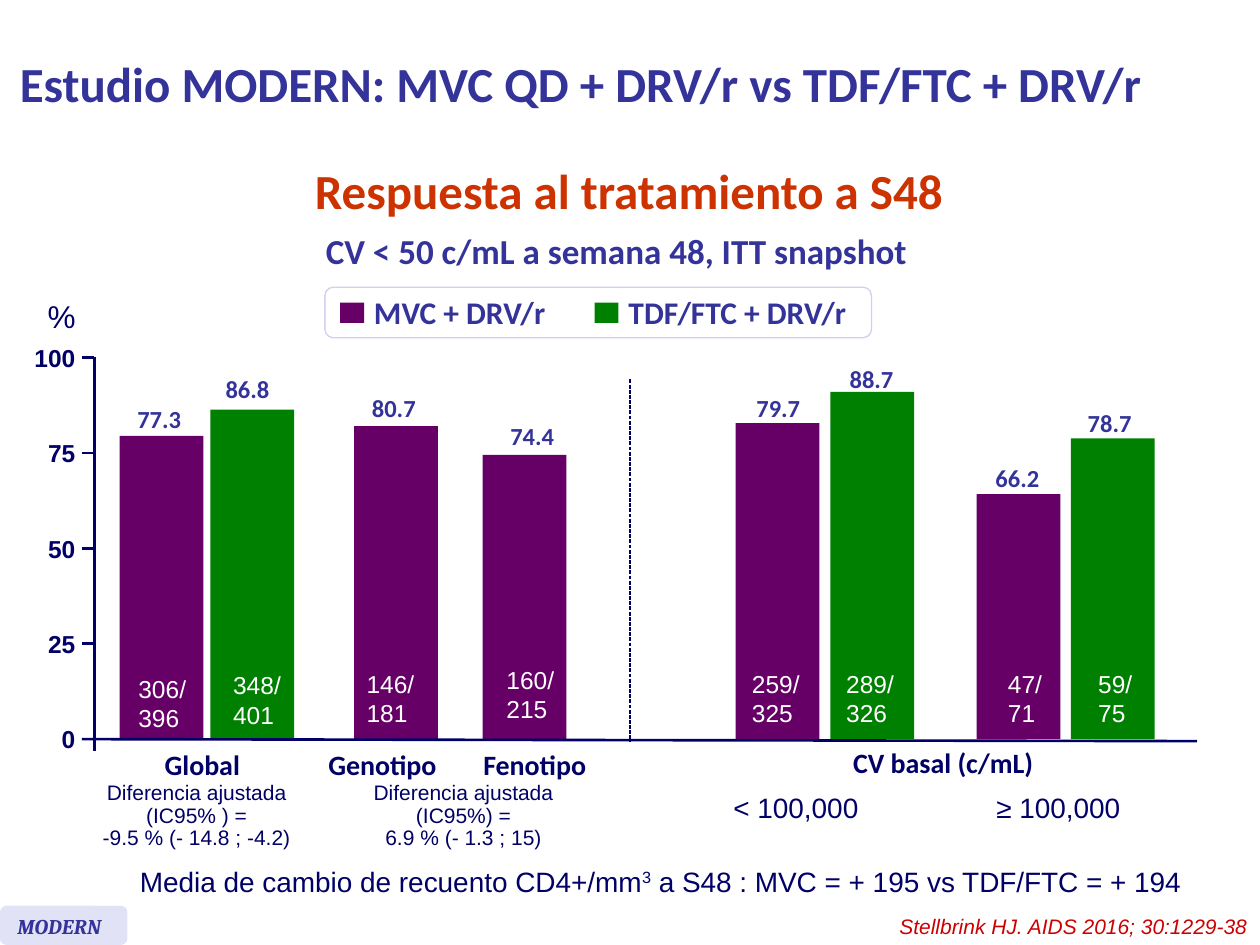
"""Build the MODERN study slide with the week 48 treatment response."""
from dataclasses import dataclass
from typing import NamedTuple, Optional

from lxml.etree import SubElement
from pptx import Presentation
from pptx.dml.color import RGBColor
from pptx.enum.dml import MSO_LINE
from pptx.enum.shapes import MSO_CONNECTOR, MSO_SHAPE as Preset
from pptx.enum.text import MSO_ANCHOR as Anchor, MSO_AUTO_SIZE as AutoSize, PP_ALIGN as Align
from pptx.oxml.ns import qn
from pptx.slide import Slide
from pptx.util import Cm, Pt


@dataclass(frozen=True)
class Theme:
    heading: str = "Calibri"
    body: str = "Arial"
    badge: str = "Cambria"
    indigo: str = "333399"
    navy: str = "000066"
    orange: str = "CC3300"
    red: str = "CC0000"
    purple: str = "660066"
    green: str = "008000"
    white: str = "FFFFFF"
    lilac: str = "D0D0F0"
    pale: str = "E2E2F6"
    title: int = 28
    subtitle: int = 20
    legend: int = 18
    label: int = 16
    value: int = 14
    small: int = 12


class Frame(NamedTuple):
    left: float
    top: float
    width: float
    height: float

    def lengths(self) -> list:
        return [Cm(side) for side in self]


class Bar(NamedTuple):
    left: float
    top: float
    color: str
    value: str
    value_left: float
    value_top: float
    count: str
    count_left: float
    count_top: float


class Label(NamedTuple):
    text: str
    frame: Frame


THEME = Theme()
BASELINE, AXIS_LEFT, CM_PER_PERCENT = 14.9, 1.9, 0.0769
BAR_WIDTH = 1.69
BARS = [
    Bar(2.41, 8.79, THEME.purple, "77.3", 2.51, 7.9, "306/\n396", 2.54, 13.46),
    Bar(4.24, 8.26, THEME.green, "86.8", 4.29, 7.29, "348/\n401", 4.45, 13.39),
    Bar(7.14, 8.59, THEME.purple, "80.7", 7.24, 7.67, "146/\n181", 7.14, 13.36),
    Bar(9.73, 9.17, THEME.purple, "74.4", 10.03, 8.23, "160/\n215", 9.96, 13.28),
    Bar(14.83, 8.53, THEME.purple, "79.7", 14.99, 7.67, "259/\n325", 14.91, 13.36),
    Bar(16.74, 7.9, THEME.green, "88.7", 16.87, 7.09, "289/\n326", 16.81, 13.36),
    Bar(19.69, 9.96, THEME.purple, "66.2", 19.81, 9.09, "47/\n71", 20.07, 13.36),
    Bar(21.59, 8.84, THEME.green, "78.7", 21.67, 7.98, "59/\n75", 21.89, 13.36),
]
GROUPS = [
    Label("Global", Frame(3.05, 14.94, 2.06, 0.94)),
    Label("Genotipo", Frame(6.35, 14.94, 2.72, 0.94)),
    Label("Fenotipo", Frame(9.47, 14.94, 2.62, 0.94)),
    Label("CV basal (c/mL)", Frame(16.92, 14.91, 4.19, 0.94)),
]
DIFFERENCES = [
    Label("Diferencia ajustada\n(IC95% ) =\n-9.5 % (- 14.8 ; -4.2)", Frame(1.73, 15.65, 4.47, 1.65)),
    Label("Diferencia ajustada\n(IC95%) =\n6.9 % (- 1.3 ; 15)", Frame(7.26, 15.65, 4.17, 1.65)),
]
VIRAL_LOADS = [
    Label("< 100,000", Frame(14.43, 15.88, 3.23, 0.86)),
    Label("≥ 100,000", Frame(19.81, 15.88, 3.05, 0.89)),
]
LEGEND = [
    (THEME.purple, 6.86, Label("MVC + DRV/r", Frame(7.29, 5.79, 4.01, 1.02))),
    (THEME.green, 11.99, Label("TDF/FTC + DRV/r", Frame(12.42, 5.79, 4.95, 1.02))),
]


def write(slide: Slide, frame: Frame, text: str, *, size: int, font: str = THEME.body,
          color: str = THEME.navy, bold: bool = False, italic: bool = False,
          align: Align = Align.LEFT, anchor: Anchor = Anchor.TOP, wrap: bool = False,
          grow: bool = True, spacing: Optional[float] = None,
          inset: Optional[float] = None, superscript: str = "") -> None:
    """Write text in a box, one paragraph per line, raising the superscript part."""
    body = slide.shapes.add_textbox(*frame.lengths()).text_frame
    body.word_wrap = wrap
    body.auto_size = AutoSize.SHAPE_TO_FIT_TEXT if grow else AutoSize.NONE
    body.vertical_anchor = anchor
    if inset is not None:
        body.margin_left = body.margin_right = Cm(inset)
        body.margin_top = body.margin_bottom = Cm(inset)
    for index, line in enumerate(text.split("\n")):
        para = body.add_paragraph() if index else body.paragraphs[0]
        para.alignment = align
        if spacing is not None:
            para.line_spacing = spacing
        for part in line.partition(superscript) if superscript else [line]:
            span = para.add_run()
            span.text = part
            span.font.name, span.font.size = font, Pt(size)
            span.font.bold, span.font.italic = bold, italic
            span.font.color.rgb = RGBColor.from_string(color)
            if superscript and part == superscript:
                span._r.get_or_add_rPr().set("baseline", "30000")


def draw_box(slide: Slide, frame: Frame, fill: str, *, preset: Preset = Preset.RECTANGLE,
             outline: Optional[str] = None) -> None:
    """Draw a filled preset shape, outlined only on request."""
    box = slide.shapes.add_shape(preset, *frame.lengths())
    box.shadow.inherit = False
    box.fill.solid()
    box.fill.fore_color.rgb = RGBColor.from_string(fill)
    if outline:
        box.line.color.rgb = RGBColor.from_string(outline)
        box.line.width = Pt(0.75)
    else:
        box.line.fill.background()


def draw_line(slide: Slide, start: tuple[float, float], end: tuple[float, float], *,
              width: float = 1.5, dash: Optional[MSO_LINE] = None) -> None:
    """Draw a straight navy line without shadow."""
    points = [Cm(place) for place in (*start, *end)]
    line = slide.shapes.add_connector(MSO_CONNECTOR.STRAIGHT, *points)
    line.line.color.rgb = RGBColor.from_string(THEME.navy)
    line.line.width = Pt(width)
    if dash is not None:
        line.line.dash_style = dash
    SubElement(line._element.spPr, qn("a:effectLst"))


def draw_bar(slide: Slide, bar: Bar) -> None:
    """Draw a bar with its value above and its patient count inside."""
    draw_box(slide, Frame(bar.left, bar.top, BAR_WIDTH, BASELINE - bar.top), bar.color)
    write(slide, Frame(bar.value_left, bar.value_top, 1.4, 1.12), bar.value, size=THEME.value,
          font=THEME.heading, color=THEME.indigo, bold=True, align=Align.CENTER, inset=0.25)
    count_width = 1.47 if len(bar.count) > 6 else 1.22
    write(slide, Frame(bar.count_left, bar.count_top, count_width, 1.45), bar.count,
          size=THEME.value, color=THEME.white)


def draw_axes(slide: Slide) -> None:
    """Draw the percentage scale, the base line and the divider."""
    for percent in range(0, 101, 25):
        level = BASELINE - percent * CM_PER_PERCENT
        width = 0.28 * len(str(percent))
        write(slide, Frame(1.52 - width, level - 0.3, width, 0.6), str(percent), size=THEME.value,
              bold=True, align=Align.RIGHT, anchor=Anchor.MIDDLE, inset=0)
        if percent:
            draw_line(slide, (1.65, level), (AXIS_LEFT, level))
    draw_line(slide, (AXIS_LEFT, 7.19), (AXIS_LEFT, 15.14))
    draw_line(slide, (1.65, BASELINE), (24.13, 14.94))
    draw_line(slide, (12.7, 7.65), (12.7, 14.94), width=0.75, dash=MSO_LINE.SQUARE_DOT)
    write(slide, Frame(0.71, 5.87, 1.07, 1.02), "%", size=THEME.legend)


def draw_legend(slide: Slide) -> None:
    """Draw the framed key of both treatments."""
    draw_box(slide, Frame(6.55, 5.79, 11.02, 1.02), THEME.white,
             preset=Preset.ROUNDED_RECTANGLE, outline=THEME.lilac)
    for color, left, label in LEGEND:
        draw_box(slide, Frame(left, 6.1, 0.48, 0.41), color)
        write(slide, label.frame, label.text, size=THEME.legend, font=THEME.heading,
              color=THEME.indigo, bold=True)


def main() -> None:
    """Assemble and save the deck."""
    deck = Presentation()
    deck.slide_width, deck.slide_height = Cm(25.4), Cm(19.05)
    page = deck.slides.add_slide(deck.slide_layouts[6])
    write(page, Frame(0.15, 0.13, 25.17, 3.07), "Estudio MODERN: MVC QD + DRV/r vs TDF/FTC + DRV/r",
          size=THEME.title, font=THEME.heading, color=THEME.indigo, bold=True,
          anchor=Anchor.MIDDLE, wrap=True, grow=False)
    write(page, Frame(5.97, 3.12, 13.41, 1.45), "Respuesta al tratamiento a S48", size=THEME.title,
          font=THEME.heading, color=THEME.orange, bold=True, align=Align.CENTER)
    write(page, Frame(4.29, 4.65, 16.28, 0.97), "CV < 50 c/mL a semana 48, ITT snapshot",
          size=THEME.subtitle, font=THEME.heading, color=THEME.indigo, bold=True,
          align=Align.CENTER, anchor=Anchor.MIDDLE, wrap=True, spacing=0.8)
    for bar in BARS:
        draw_bar(page, bar)
    draw_axes(page)
    draw_legend(page)
    for label in GROUPS:
        write(page, label.frame, label.text, size=THEME.label, font=THEME.heading, bold=True,
              align=Align.CENTER)
    for labels, size in ((DIFFERENCES, THEME.small), (VIRAL_LOADS, THEME.label)):
        for label in labels:
            write(page, label.frame, label.text, size=size, align=Align.CENTER, spacing=0.9)
    write(page, Frame(2.57, 17.3, 22.12, 0.94),
          "Media de cambio de recuento CD4+/mm3 a S48 : MVC = + 195 vs TDF/FTC = + 194",
          size=THEME.label, wrap=True, superscript="3")
    draw_box(page, Frame(0, 18.26, 2.57, 0.79), THEME.pale, preset=Preset.ROUNDED_RECTANGLE)
    write(page, Frame(0.1, 18.29, 2.39, 0.76), "MODERN", size=THEME.small, font=THEME.badge,
          color=THEME.indigo, bold=True, italic=True, wrap=True)
    write(page, Frame(16.81, 18.29, 8.59, 0.76), "Stellbrink HJ. AIDS 2016; 30:1229-38",
          size=THEME.small, color=THEME.red, italic=True, align=Align.RIGHT, wrap=True)
    deck.save("out.pptx")


if __name__ == "__main__":
    main()
